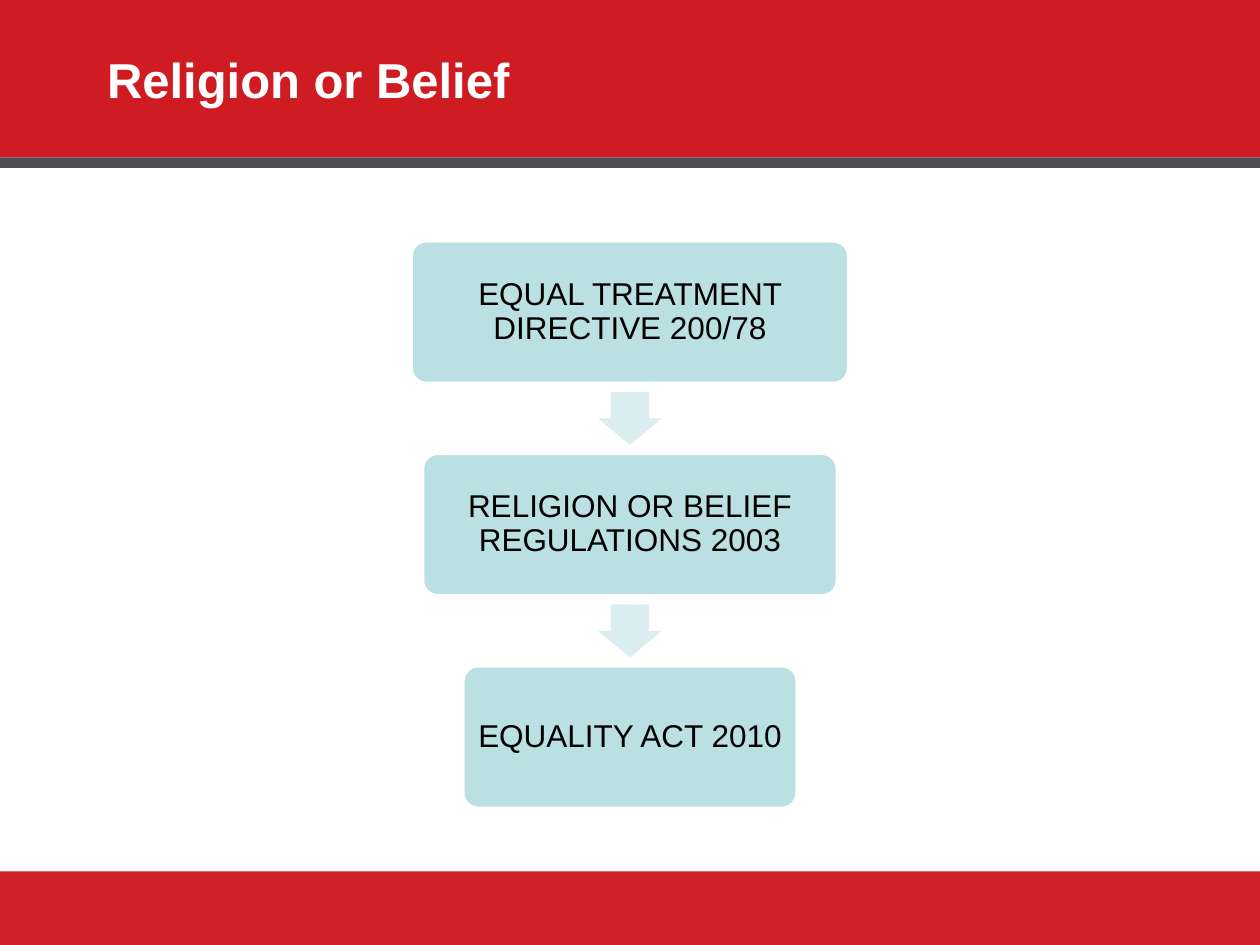
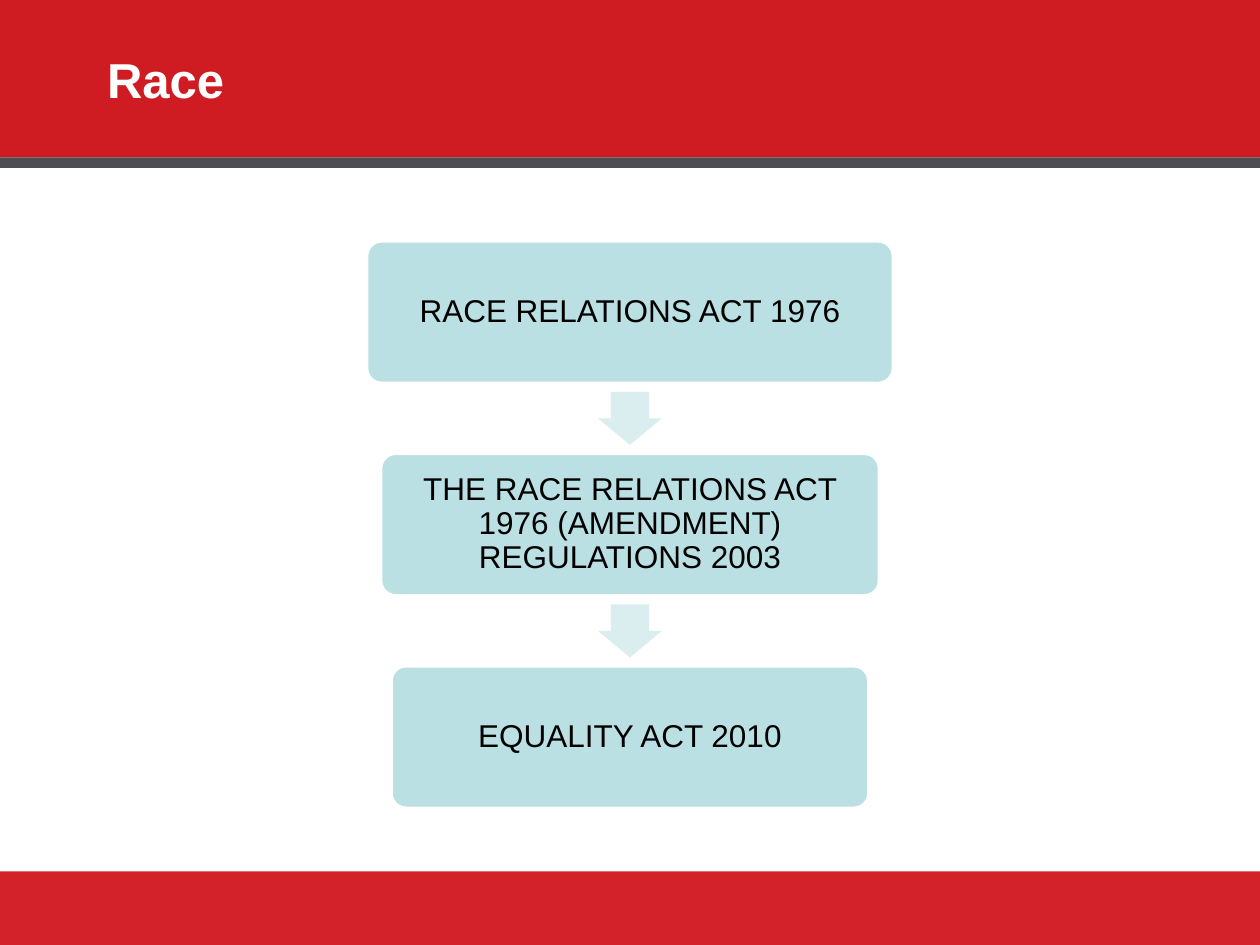
import pptx
import pptx.dml.color
import pptx.enum.shapes
import pptx.enum.text
import pptx.util

Pt = pptx.util.Pt
SHAPES = pptx.enum.shapes.MSO_SHAPE
MIDDLE = pptx.enum.text.MSO_ANCHOR.MIDDLE
ALIGN = pptx.enum.text.PP_ALIGN

PAGE_WIDTH, PAGE_HEIGHT = 720, 540
HEADER_HEIGHT = 90
BANDS = [
    (0, HEADER_HEIGHT, "CF1C22"),
    (HEADER_HEIGHT, 6, "4D4E53"),
    (498, 42, "D3222A"),
]
TITLE_BOX = (54, 0, 612, HEADER_HEIGHT)
FLOW_BOX = (54, 138.2, 612, 323.2)
STEP_HEIGHT = 80.4
ARROW_WIDTH, ARROW_HEIGHT = 36.4, 30.3

TIMELINES = [
    ("Religion or Belief", [
        ("EQUAL TREATMENT DIRECTIVE 200/78", 249),
        ("RELIGION OR BELIEF REGULATIONS 2003", 236),
        ("EQUALITY ACT 2010", 190),
    ]),
    ("Race", [
        ("RACE RELATIONS ACT 1976", 300),
        ("THE RACE RELATIONS ACT 1976 (AMENDMENT) REGULATIONS 2003", 284),
        ("EQUALITY ACT 2010", 272),
    ]),
]


def colour(hex_code):
    """Return the colour for a hex string."""
    return pptx.dml.color.RGBColor.from_string(hex_code)


def add_filled(page, kind, box, fill, line=None):
    """Add a flat preset shape in the given box."""
    shape = page.shapes.add_shape(kind, *map(Pt, box))
    shape.shadow.inherit = False
    shape.fill.solid()
    shape.fill.fore_color.rgb = colour(fill)
    if line:
        shape.line.color.rgb = colour(line)
        shape.line.width = Pt(1)
    else:
        shape.line.fill.background()
    return shape


def write(frame, text, size, hex_code, align, bold=False):
    """Write one vertically centred, formatted paragraph."""
    frame.text = text
    frame.word_wrap = True
    frame.vertical_anchor = MIDDLE
    para = frame.paragraphs[0]
    para.alignment = align
    for span in para.runs:
        span.font.name = "Arial"
        span.font.size = Pt(size)
        span.font.bold = bold
        span.font.color.rgb = colour(hex_code)
    return para


def add_master_bands(deck, page):
    """Draw the bands on a page and move them behind everything on the master."""
    tree = deck.slide_master.shapes.element
    for index, (top, height, fill) in enumerate(BANDS):
        band = add_filled(page, SHAPES.RECTANGLE, (0, top, PAGE_WIDTH, height), fill)
        band.element.nvSpPr.cNvPr.id = 20 + index
        tree.insert(2 + index, band.element)


def add_title(page, box, text):
    """Place and format the title placeholder."""
    title = page.shapes.title
    title.left, title.top, title.width, title.height = map(Pt, box)
    write(title.text_frame, text, 28, "FFFFFF", ALIGN.LEFT, bold=True)


def add_step(page, box, text):
    """Add one rounded step of the flow."""
    step = add_filled(page, SHAPES.ROUNDED_RECTANGLE, box, "BBE0E3", "FFFFFF")
    step.adjustments[0] = 0.1
    frame = step.text_frame
    frame.margin_left = frame.margin_right = Pt(5)
    frame.margin_top = frame.margin_bottom = Pt(5)
    write(frame, text, 18, "000000", ALIGN.CENTER).line_spacing = 0.9


def add_arrow(page, center, middle):
    """Add a down arrow around a point."""
    box = (center - ARROW_WIDTH / 2, middle - ARROW_HEIGHT / 2, ARROW_WIDTH, ARROW_HEIGHT)
    arrow = add_filled(page, SHAPES.DOWN_ARROW, box, "DAEDEF")
    arrow.adjustments[0] = 0.6
    arrow.adjustments[1] = 0.5


def add_flow(page, box, steps):
    """Stack the steps evenly in the box with an arrow in each gap."""
    left, top, width, height = box
    center = left + width / 2
    pitch = (height - STEP_HEIGHT) / (len(steps) - 1)
    gap = pitch - STEP_HEIGHT
    for index, (text, step_width) in enumerate(steps):
        step_top = top + index * pitch
        if index:
            add_arrow(page, center, step_top - gap / 2)
        add_step(page, (center - step_width / 2, step_top, step_width, STEP_HEIGHT), text)


def main():
    """Build and save the deck."""
    deck = pptx.Presentation()
    deck.slide_width, deck.slide_height = Pt(PAGE_WIDTH), Pt(PAGE_HEIGHT)
    for index, (heading, steps) in enumerate(TIMELINES):
        page = deck.slides.add_slide(deck.slide_layouts[5])
        if index == 0:
            add_master_bands(deck, page)
        add_title(page, TITLE_BOX, heading)
        add_flow(page, FLOW_BOX, steps)
    deck.save("out.pptx")


if __name__ == "__main__":
    main()
